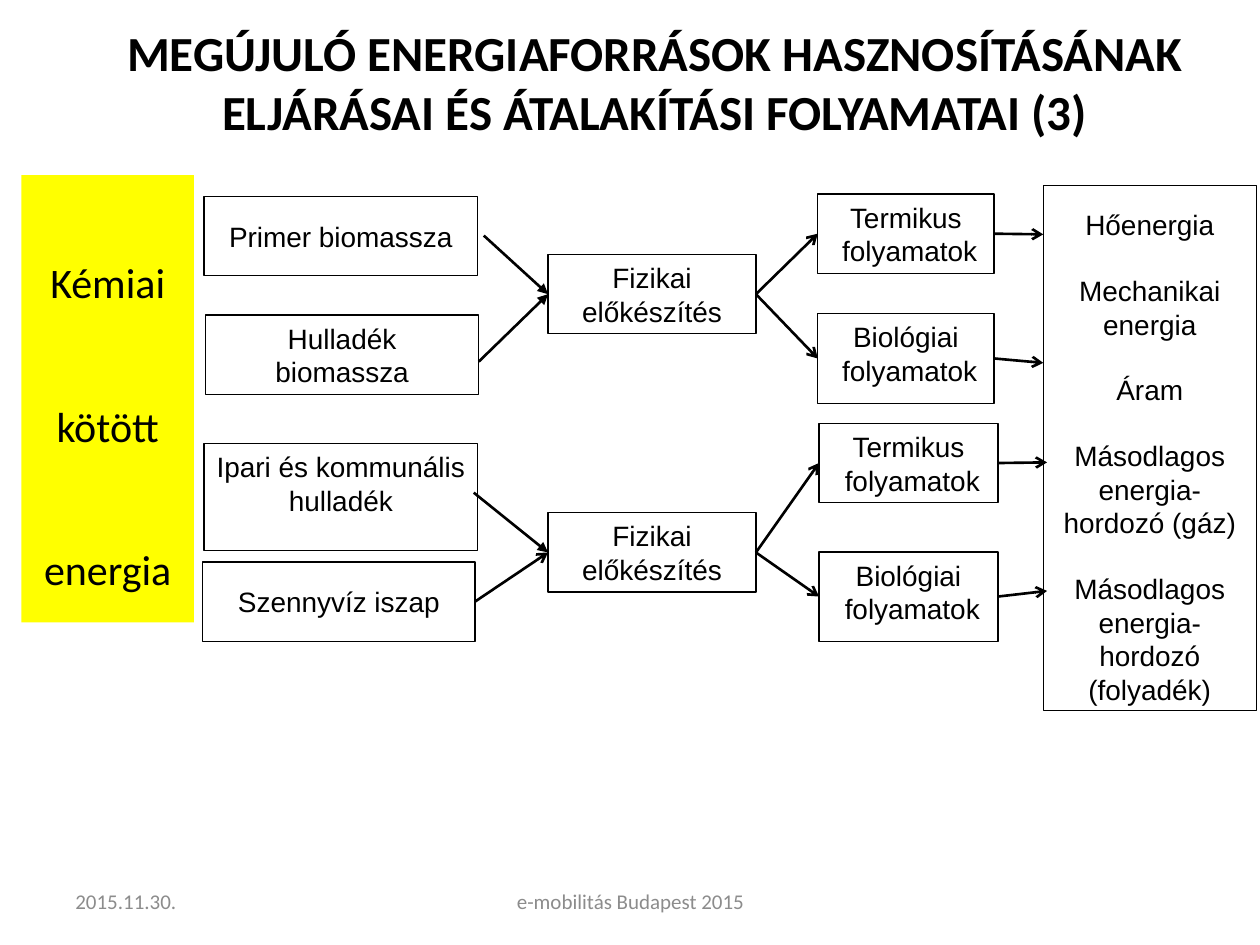
from dataclasses import dataclass

from lxml import etree
from pptx import Presentation
from pptx.dml.color import RGBColor as RGB
from pptx.enum.shapes import MSO_CONNECTOR as CONN, MSO_SHAPE as SHAPE
from pptx.enum.text import MSO_ANCHOR as ANCHOR, MSO_AUTO_SIZE as AUTO, PP_ALIGN as ALIGN
from pptx.oxml.ns import qn
from pptx.util import Inches, Pt


@dataclass(frozen=True)
class Theme:
    ink: RGB = RGB(0, 0, 0)
    paper: RGB = RGB(255, 255, 255)
    accent: RGB = RGB(255, 255, 0)
    muted: RGB = RGB(0x8C, 0x8C, 0x8C)
    heading_font: str = "Calibri"
    box_font: str = "Arial"
    title: Pt = Pt(28)
    source: Pt = Pt(24)
    box: Pt = Pt(16)
    footer: Pt = Pt(12)
    border: Pt = Pt(0.75)
    arrow: Pt = Pt(1.5)


T = Theme()
TOP, LEFT, RIGHT = 0, 1, 3

BOX_FONT = {"name": T.box_font, "size": T.box}
SOURCE_FONT = {"name": T.heading_font, "size": T.source}
FOOTER_FONT = {"name": T.heading_font, "size": T.footer}
TITLE_FONT = {"name": T.heading_font, "size": T.title, "bold": True}


def apply(obj, values):
    for name, value in values.items():
        setattr(obj, name, value)


def place(sp, at):
    apply(sp, dict(zip(("left", "top", "width", "height"), map(Inches, at))))


def write(sp, lines, font, color=T.ink, frame=None, para=None):
    tf = sp.text_frame
    apply(tf, {"word_wrap": True, "auto_size": AUTO.NONE,
               "vertical_anchor": ANCHOR.TOP, **(frame or {})})
    for i, line in enumerate(lines):
        p = tf.add_paragraph() if i else tf.paragraphs[0]
        apply(p, {"alignment": ALIGN.CENTER, **(para or {})})
        r = p.add_run()
        r.text = line
        apply(r.font, font)
        r.font.color.rgb = color
    return tf


def add_title(s, text, at):
    sp = s.shapes.title
    place(sp, at)
    write(sp, [text], TITLE_FONT)


def add_footer(s, text, at, align):
    sp = s.shapes.add_textbox(*map(Inches, at))
    write(sp, [text], FOOTER_FONT, T.muted,
          {"vertical_anchor": ANCHOR.MIDDLE}, {"alignment": align})


def add_rect(s, at, fill):
    sp = s.shapes.add_shape(SHAPE.RECTANGLE, *map(Inches, at))
    sp.shadow.inherit = False
    sp.fill.solid()
    sp.fill.fore_color.rgb = fill
    return sp


def add_box(s, at, lines, **frame):
    sp = add_rect(s, at, T.paper)
    sp.line.color.rgb = T.ink
    sp.line.width = T.border
    write(sp, lines, BOX_FONT, frame=frame)
    return sp


def add_source(s, at, lines):
    sp = add_rect(s, at, T.accent)
    sp.line.fill.background()
    write(sp, lines, SOURCE_FONT, para={"line_spacing": 2.5, "space_after": Pt(10)})


def add_outputs(s, at, groups):
    sp = add_box(s, at, [line for group in groups for line in group],
                 margin_top=Inches(0.18))
    paragraphs = iter(sp.text_frame.paragraphs)
    for i, group in enumerate(groups):
        for j, _ in enumerate(group):
            p = next(paragraphs)
            if i and j == 0:
                p.space_before = Pt(18.4)


def add_arrow(s, start, end, head="arrow"):
    points = [p if isinstance(p[0], (int, float)) else (0, 0) for p in (start, end)]
    c = s.shapes.add_connector(CONN.STRAIGHT, *(Inches(v) for p in points for v in p))
    for target, join in ((start, c.begin_connect), (end, c.end_connect)):
        if not isinstance(target[0], (int, float)):
            join(*target)
    c.line.color.rgb = T.ink
    c.line.width = T.arrow
    ln = c.line._get_or_add_ln()
    etree.SubElement(ln, qn("a:tailEnd"), type=head)
    etree.SubElement(c._element.spPr, qn("a:effectLst"))


def add_process_flow(s, prep_top, left, width, thermal_top, bio_top, ends):
    prep = add_box(s, (4.35, prep_top, 1.65, 0.63), ["Fizikai előkészítés"])
    steps = (("Termikus", thermal_top, 0.63), ("Biológiai", bio_top, 0.71))
    for (name, top, height), end in zip(steps, ends):
        step = add_box(s, (left, top, width, height), [name, " folyamatok"])
        add_arrow(s, (prep, RIGHT), (step, LEFT))
        add_arrow(s, (step, RIGHT), end)
    return prep


def main():
    prs = Presentation()
    prs.slide_width, prs.slide_height = Inches(10), Inches(7.5)
    s = prs.slides.add_slide(prs.slide_layouts[5])

    add_title(s, "MEGÚJULÓ ENERGIAFORRÁSOK HASZNOSÍTÁSÁNAK "
                 "ELJÁRÁSAI ÉS ÁTALAKÍTÁSI FOLYAMATAI (3)", (0.59, 0.13, 9.21, 1.04))
    add_footer(s, "2015.11.30.", (0.5, 6.95, 2.33, 0.4), ALIGN.LEFT)
    add_footer(s, "e-mobilitás Budapest 2015", (3.42, 6.95, 3.17, 0.4), ALIGN.CENTER)

    add_source(s, (0.17, 1.39, 1.37, 3.55), ["Kémiai", "kötött", "energia"])
    add_box(s, (1.62, 1.56, 2.17, 0.63), ["Primer biomassza"],
            vertical_anchor=ANCHOR.MIDDLE)
    add_box(s, (1.63, 2.5, 2.17, 0.63), ["Hulladék biomassza"])
    add_box(s, (1.62, 3.52, 2.17, 0.85), ["Ipari és kommunális hulladék"],
            margin_left=Inches(0.08), margin_right=Inches(0.08))
    sludge = add_box(s, (1.61, 4.46, 2.16, 0.63), ["Szennyvíz iszap"],
                     vertical_anchor=ANCHOR.MIDDLE)
    add_outputs(s, (8.28, 1.47, 1.69, 4.17), [
        ["Hőenergia"],
        ["Mechanikai energia"],
        ["Áram"],
        ["Másodlagos energia-", "hordozó (gáz)"],
        ["Másodlagos energia-", "hordozó (folyadék)"],
    ])

    biomass = add_process_flow(s, 2.02, 6.49, 1.4, 1.54, 2.49,
                               [(8.28, 1.86), (8.28, 2.88)])
    waste = add_process_flow(s, 4.07, 6.5, 1.42, 3.36, 4.38,
                             [(8.31, 3.67), (8.31, 4.69)])
    add_arrow(s, (3.84, 1.87), (biomass, LEFT), "triangle")
    add_arrow(s, (3.8, 2.87), (biomass, LEFT), "triangle")
    add_arrow(s, (3.76, 3.91), (waste, LEFT), "triangle")
    add_arrow(s, (sludge, RIGHT), (waste, LEFT))

    prs.save("out.pptx")


if __name__ == "__main__":
    main()
